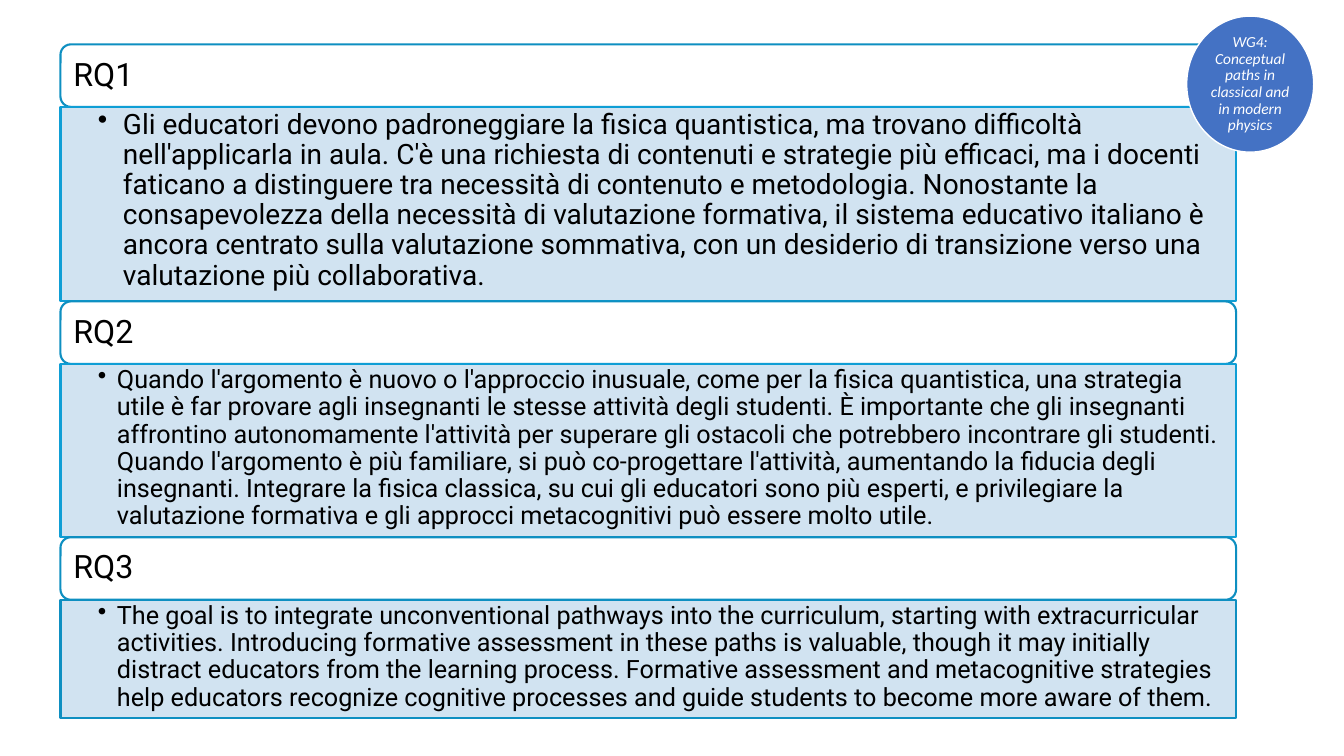
from lxml import etree
from pptx import Presentation
from pptx.dml.color import RGBColor
from pptx.enum.shapes import MSO_SHAPE
from pptx.enum.text import MSO_ANCHOR, PP_ALIGN
from pptx.oxml.ns import qn
from pptx.util import Inches, Pt

RECT, ROUND, OVAL = MSO_SHAPE.RECTANGLE, MSO_SHAPE.ROUNDED_RECTANGLE, MSO_SHAPE.OVAL
TOP, MIDDLE = MSO_ANCHOR.TOP, MSO_ANCHOR.MIDDLE
LEFT, CENTER = PP_ALIGN.LEFT, PP_ALIGN.CENTER

HEAD = 0.62
# title, text, text height, size, bullet indent, right margin, border
PARTS = [
    ("RQ1", "Gli educatori devono padroneggiare la fisica quantistica, ma trovano "
     "difficoltà nell'applicarla in aula. C'è una richiesta di contenuti e strategie "
     "più efficaci, ma i docenti faticano a distinguere tra necessità di contenuto e "
     "metodologia. Nonostante la consapevolezza della necessità di valutazione "
     "formativa, il sistema educativo italiano è ancora centrato sulla valutazione "
     "sommativa, con un desiderio di transizione verso una valutazione più "
     "collaborativa.", 1.93, 20, 0.25, 0.16, "0F9ED5"),
    ("RQ2", "Quando l'argomento è nuovo o l'approccio inusuale, come per la fisica "
     "quantistica, una strategia utile è far provare agli insegnanti le stesse "
     "attività degli studenti. È importante che gli insegnanti affrontino "
     "autonomamente l'attività per superare gli ostacoli che potrebbero incontrare "
     "gli studenti. Quando l'argomento è più familiare, si può co-progettare "
     "l'attività, aumentando la fiducia degli insegnanti. Integrare la fisica "
     "classica, su cui gli educatori sono più esperti, e privilegiare la valutazione "
     "formativa e gli approcci metacognitivi può essere molto utile.",
     1.72, 18, 0.19, 0.14, "0F9ED5"),
    ("RQ3", "The goal is to integrate unconventional pathways into the curriculum, "
     "starting with extracurricular activities. Introducing formative assessment in "
     "these paths is valuable, though it may initially distract educators from the "
     "learning process. Formative assessment and metacognitive strategies help "
     "educators recognize cognitive processes and guide students to become more "
     "aware of them.", 1.17, 18, 0.19, 0.18, "0E8FC1"),
]


def color(text):
    return RGBColor.from_string(text)


def panel(slide, kind, box, fill, line, weight):
    shape = slide.shapes.add_shape(kind, *(Inches(n) for n in box))
    shape.shadow.inherit = False
    shape.fill.solid()
    shape.fill.fore_color.rgb = color(fill)
    shape.line.color.rgb = color(line)
    shape.line.width = Pt(weight)
    return shape


def write(shape, text, size, pads, anchor, align=LEFT, font="Roboto",
          ink="000000", italic=None, indent=0):
    """Fill a shape with one paragraph, bulleted when an indent is given."""
    frame = shape.text_frame
    frame.word_wrap = True
    frame.vertical_anchor = anchor
    (frame.margin_left, frame.margin_top,
     frame.margin_right, frame.margin_bottom) = (Inches(n) for n in pads)
    para = frame.paragraphs[0]
    para.text = text
    para.alignment = align
    para.line_spacing = 0.9
    if indent:
        para.level = 1
        props = para._p.get_or_add_pPr()
        props.set("marL", str(Inches(indent)))
        props.set("indent", str(-Inches(indent)))
        etree.SubElement(props, qn("a:buChar")).set("char", "•")
    para.font.name = font
    para.font.size = Pt(size)
    para.font.italic = italic
    para.font.color.rgb = color(ink)


def section(slide, box, part):
    """Draw a rounded heading with its bulleted text below."""
    left, top, width, height = box
    title, text, _, size, indent, right, line = part
    head = panel(slide, ROUND, (left, top, width, HEAD), "FFFFFF", "0E8FC1", 1.5)
    write(head, title, 23, [0.1] * 4, MIDDLE)
    body = panel(slide, RECT, (left, top + HEAD, width, height - HEAD),
                 "D1E3F1", line, 1.5)
    write(body, text, size, (0.37, 0.03, right, 0.03), TOP, indent=indent)


def badge(slide, box):
    shape = panel(slide, OVAL, box, "4472C4", "FFFFFF", 1)
    write(shape, "WG4: Conceptual paths in classical and in modern physics", 11,
          [0.03] * 4, MIDDLE, CENTER, "Calibri", "FFFFFF", True)


def main():
    deck = Presentation()
    deck.slide_width, deck.slide_height = Inches(13.33), Inches(7.5)
    slide = deck.slides.add_slide(deck.slide_layouts[6])
    top = 0.44
    for part in PARTS:
        height = HEAD + part[2]
        section(slide, (0.6, top, 11.66, height), part)
        top += height
    badge(slide, (11.77, 0.16, 1.26, 1.35))
    deck.save("out.pptx")


if __name__ == "__main__":
    main()
